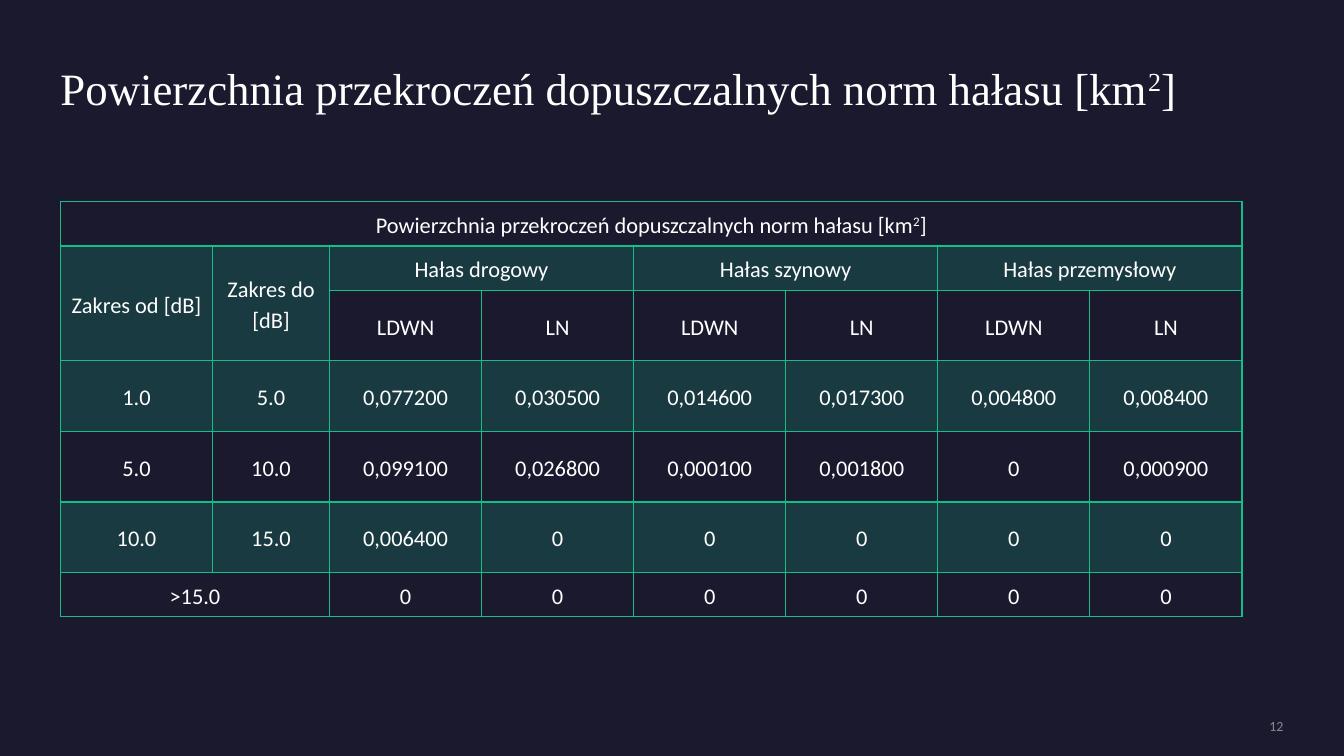
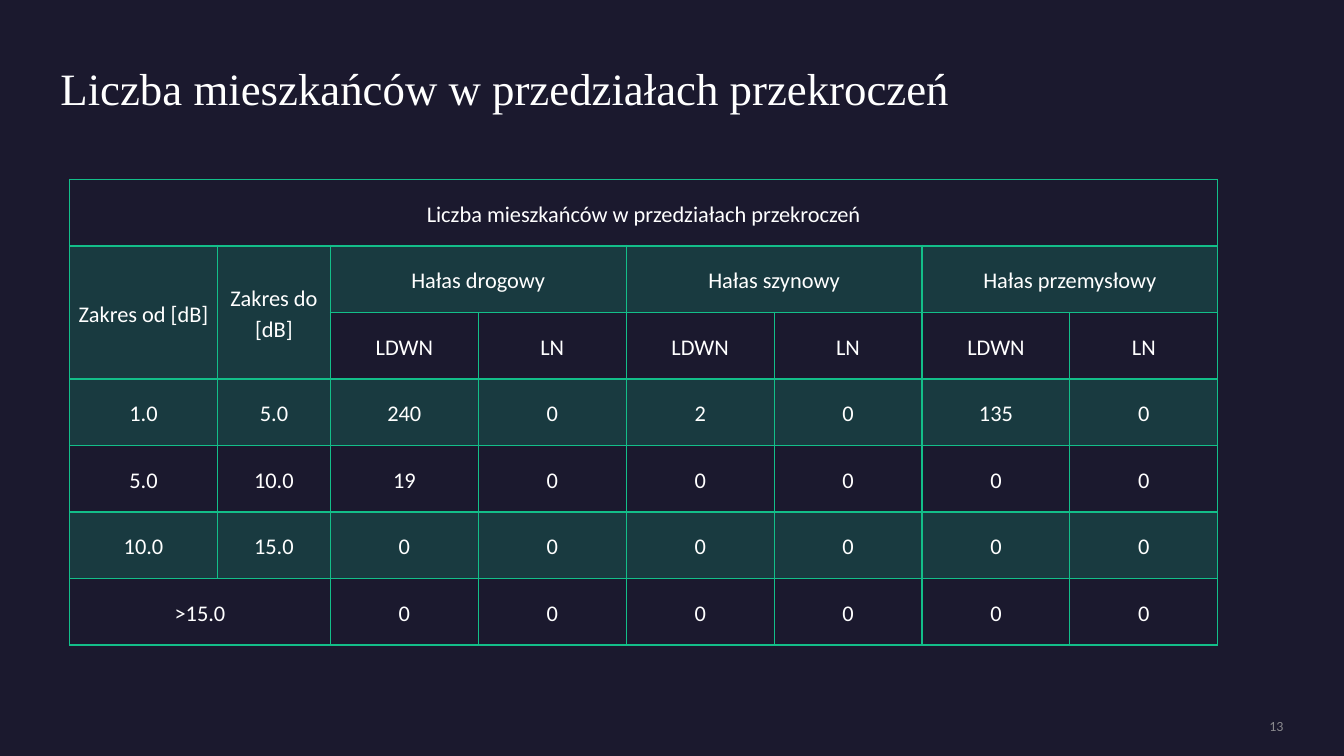
from pptx import Presentation
from pptx.dml.color import RGBColor
from pptx.enum.text import MSO_ANCHOR, MSO_AUTO_SIZE, PP_ALIGN
from pptx.oxml.ns import qn
from pptx.util import Inches, Pt
from lxml.etree import SubElement

HUES = {"back": "1B192E", "text": "FFFFFF", "green": "13BE89", "grey": "A6A6A6"}
SERIF, SANS = "Times New Roman", "Calibri"
TITLE = (0.6, 0.6, 12.13, 1.08)
NUMBER = (10.88, 7.12, 1.85, 0.17)
GROUPS = ["Hałas drogowy", "Hałas szynowy", "Hałas przemysłowy"]
RANGES = [["1.0", "5.0"], ["5.0", "10.0"], ["10.0", "15.0"], [">15.0", ""]]
# Row, column, last row, last column of each merged cell
SPANS = [(0, 0, 0, 7), (1, 0, 2, 0), (1, 1, 2, 1), (6, 0, 6, 1)]
SPANS += [(1, col, 1, col + 1) for col in (2, 4, 6)]

# "^" stands before a raised digit
SLIDES = [
    dict(
        title="Powierzchnia przekroczeń dopuszczalnych norm hałasu [km^2]",
        number="12",
        box=(0.6, 2, 11.72, 4.12),
        narrow=1.16,
        rows=[0.44] * 2 + [0.7] * 4 + [0.44],
        data=[
            ["0,077200", "0,030500", "0,014600", "0,017300", "0,004800", "0,008400"],
            ["0,099100", "0,026800", "0,000100", "0,001800", "0", "0,000900"],
            ["0,006400"] + ["0"] * 5,
            ["0"] * 6,
        ],
    ),
    dict(
        title="Liczba mieszkańców w przedziałach przekroczeń",
        number="13",
        box=(0.69, 1.78, 11.39, 4.62),
        narrow=1.12,
        rows=[0.66] * 7,
        data=[
            ["240", "0", "2", "0", "135", "0"],
            ["19"] + ["0"] * 5,
            ["0"] * 6,
            ["0"] * 6,
        ],
    ),
]


def color(name):
    return RGBColor.from_string(HUES[name])


def fade(node, share):
    """Make the first colour under the node partly clear."""
    tint = node.find(".//" + qn("a:srgbClr"))
    SubElement(tint, qn("a:alpha"), val=str(share * 1000))


def write(para, text, face, size, hue="text"):
    para.font.name, para.font.size = face, Pt(size)
    para.font.color.rgb = color(hue)
    head, mark, tail = text.partition("^")
    para.add_run().text = head
    if mark:
        power = para.add_run()
        power.text = tail[0]
        power._r.get_or_add_rPr().set("baseline", "30000")
        para.add_run().text = tail[1:]


def clear(frame):
    frame.margin_left = frame.margin_right = 0
    frame.margin_top = frame.margin_bottom = 0
    frame.word_wrap = True


def add_title(slide, box, text):
    shape = slide.shapes.title
    shape.left, shape.top, shape.width, shape.height = map(Inches, box)
    frame = shape.text_frame
    clear(frame)
    frame.auto_size = MSO_AUTO_SIZE.NONE
    frame.vertical_anchor = MSO_ANCHOR.TOP
    para = frame.paragraphs[0]
    para.alignment = PP_ALIGN.LEFT
    write(para, text, SERIF, 32)


def add_number(slide, box, text):
    frame = slide.shapes.add_textbox(*map(Inches, box)).text_frame
    clear(frame)
    frame.vertical_anchor = MSO_ANCHOR.MIDDLE
    para = frame.paragraphs[0]
    para.alignment = PP_ALIGN.RIGHT
    para.space_after = Pt(6)
    write(para, text, SANS, 10, "grey")
    fade(para._p, 80)


def add_lines(cell, base):
    """Draw the four borders, with the given width below."""
    props = cell._tc.get_or_add_tcPr()
    for spot, side in enumerate("LRTB"):
        width = base if side == "B" else 1
        line = SubElement(props, qn("a:ln" + side), w=str(Pt(width)))
        fill = SubElement(line, qn("a:solidFill"))
        SubElement(fill, qn("a:srgbClr"), val=HUES["green"])
        props.insert(spot, line)


def style(cell, text, row):
    cell.margin_left = cell.margin_right = Inches(0.05)
    cell.margin_top = cell.margin_bottom = 0
    cell.vertical_anchor = MSO_ANCHOR.MIDDLE
    para = cell.text_frame.paragraphs[0]
    para.alignment = PP_ALIGN.CENTER
    para.line_spacing = 1.15
    write(para, text, SANS, 16)
    # Odd rows carry the green tint
    if row % 2:
        cell.fill.solid()
        cell.fill.fore_color.rgb = color("green")
        fade(cell._tc.tcPr, 20)
    else:
        cell.fill.background()
    add_lines(cell, 1 if row else 2)


def add_grid(slide, box, title, narrow, rows, data):
    # Heading rows, then the ranges with their values
    groups = [text for name in GROUPS for text in (name, "")]
    cells = [
        [title] + [""] * 7,
        ["Zakres od [dB]", "Zakres do [dB]"] + groups,
        ["", ""] + ["LDWN", "LN"] * 3,
    ]
    cells += [span + vals for span, vals in zip(RANGES, data)]

    table = slide.shapes.add_table(len(cells), 8, *map(Inches, box)).table
    table.first_row = table.horz_banding = False
    wide = (box[2] - narrow) / 7
    for col, part in enumerate(table.columns):
        part.width = Inches(narrow if col == 1 else wide)
    for part, height in zip(table.rows, rows):
        part.height = Inches(height)
    for top, left, low, right in SPANS:
        table.cell(top, left).merge(table.cell(low, right))
    for row, line in enumerate(cells):
        for col, text in enumerate(line):
            # Cells merged downwards keep the tint of their first row
            tone = 1 if row == 2 and col < 2 else row
            style(table.cell(row, col), text, tone)


def add_page(deck, title, number, box, narrow, rows, data):
    slide = deck.slides.add_slide(deck.slide_layouts[5])
    add_title(slide, TITLE, title)
    add_number(slide, NUMBER, number)
    add_grid(slide, box, title, narrow, rows, data)


def main():
    deck = Presentation()
    deck.slide_width, deck.slide_height = Inches(13.33), Inches(7.5)
    back = deck.slide_master.background.fill
    back.solid()
    back.fore_color.rgb = color("back")
    for page in SLIDES:
        add_page(deck, **page)
    deck.save("out.pptx")


if __name__ == "__main__":
    main()
